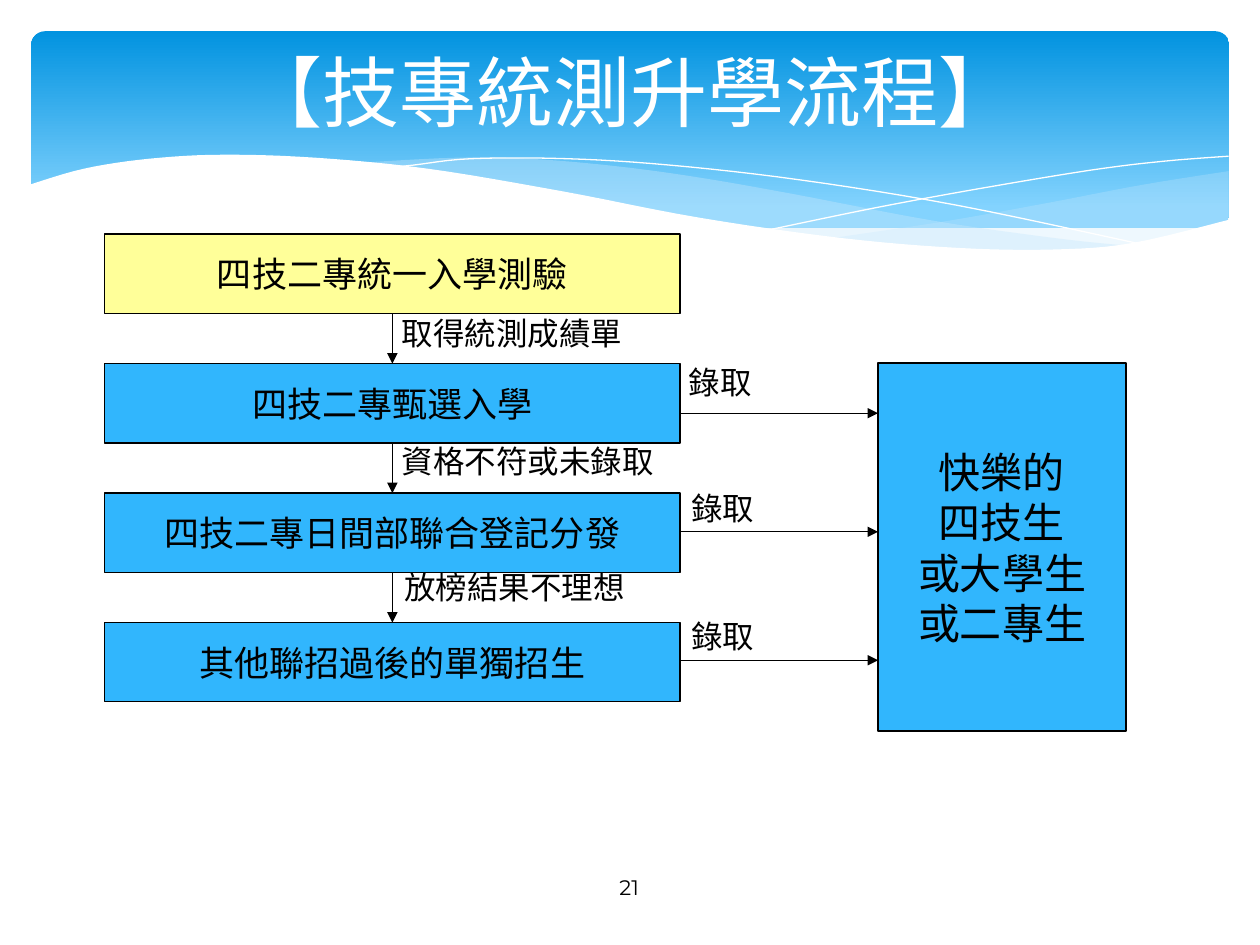
from dataclasses import dataclass

from lxml.etree import SubElement
from pptx import Presentation
from pptx.dml.color import RGBColor
from pptx.enum.shapes import MSO_CONNECTOR as Connector, MSO_SHAPE as Shape
from pptx.enum.text import MSO_ANCHOR as Anchor, PP_ALIGN as Align
from pptx.oxml.ns import qn
from pptx.util import Cm, Pt


@dataclass(frozen=True)
class Theme:
    white: str = "FFFFFF"
    black: str = "000000"
    banner_top: str = "0293E0"
    banner_bottom: str = "83D3FE"
    wave: str = "C6E7FC"
    exam: str = "FFFF99"
    step: str = "31B6FD"
    title_font: str = "Cabin"
    body_font: str = "Arial"
    number_font: str = "Montserrat"
    title_size: int = 44
    result_size: int = 24
    step_size: int = 20
    label_size: int = 18
    number_size: int = 12
    outline: float = 0.75


THEME = Theme()

BACK_WAVE = (
    [(24.77, 3.45), (23.01, 3.73), (21.13, 4.09), (19.13, 4.45), (16.79, 4.8)],
    [(16.79, 4.8), (17.91, 4.93), (19.23, 5.03), (20.68, 5.05), (22.15, 5),
     (23.57, 4.78), (24.77, 4.45)],
)
MIDDLE_WAVE = (
    [(22.68, 4.95), (21.26, 4.8), (18.82, 4.45), (15.98, 3.91), (14.1, 3.58),
     (12.42, 3.35), (10.67, 3.2), (9.17, 3.18), (7.26, 3.28)],
    [(7.26, 3.28), (9.19, 3.51), (11.4, 3.91), (14.38, 4.47), (16.51, 4.78),
     (18.34, 4.98), (19.94, 5.08), (21.29, 5.08), (22.68, 4.95)],
)
FALLING_LINE = [(7.85, 3.38), (8.33, 3.33), (9.5, 3.2), (11.43, 3.2), (13.51, 3.33),
                (16.15, 3.63), (19.3, 4.14), (23.04, 4.93)]
RISING_LINE = [(15.57, 4.62), (17.65, 4.19), (19.71, 3.81), (22, 3.43),
               (23.47, 3.25), (24.77, 3.15)]
FRONT_WAVE = (
    [(24.82, 4.42), (22.83, 4.9), (21.26, 5.03), (19.33, 5), (16.97, 4.8),
     (14.1, 4.39), (11.35, 3.86), (8.61, 3.4), (6.35, 3.18), (4.49, 3.12),
     (3.02, 3.2), (1.7, 3.4), (0.58, 3.73)],
    [(0.58, 6.12), (24.82, 6.12)],
)

STEPS = ["四技二專統一入學測驗", "四技二專甄選入學", "四技二專日間部聯合登記分發", "其他聯招過後的單獨招生"]
STEP_LEFT, STEP_TOP, STEP_WIDTH, STEP_HEIGHT, STEP_PITCH = 2.11, 4.72, 11.6, 1.6, 2.61
RESULT_LEFT = 17.7
RESULT = ["快樂的", "四技生", "或大學生", "或二專生"]
CONDITIONS = [
    ("取得統測成績單", 7.85, 6.2, 4.95, False),
    ("資格不符或未錄取", 7.85, 8.79, 6.45, True),
    ("放榜結果不理想", 7.9, 11.33, 5.59, True),
]
ADMISSIONS = [(8.33, 13.64, 7.19), (10.72, 13.69, 9.73), (13.31, 13.69, 12.32)]


def color(value):
    return RGBColor.from_string(value)


def smooth(knots, steps=6):
    if len(knots) < 3:
        return knots
    padded = [knots[0], *knots, knots[-1]]
    points = [knots[0]]
    for a, b, c, d in zip(padded, padded[1:], padded[2:], padded[3:]):
        for step in range(1, steps + 1):
            t = step / steps
            points.append(tuple(
                (2 * q + (r - p) * t + (2 * p - 5 * q + 4 * r - s) * t**2
                 + (3 * q - p - 3 * r + s) * t**3) / 2
                for p, q, r, s in zip(a, b, c, d)))
    return points


def add_curve(slide, edges, closed):
    points = [(Cm(x), Cm(y)) for edge in edges for x, y in smooth(edge)]
    builder = slide.shapes.build_freeform(*points[0])
    builder.add_line_segments(points[1:], close=closed)
    shape = builder.convert_to_shape()
    shape.shadow.inherit = False
    return shape


def add_wave(slide, edges, fill, opacity=100):
    shape = add_curve(slide, edges, True)
    shape.fill.solid()
    shape.fill.fore_color.rgb = color(fill)
    shape.line.fill.background()
    if opacity < 100:
        fill_color = shape._element.find(".//" + qn("a:srgbClr"))
        SubElement(fill_color, qn("a:alpha"), val=str(opacity * 1000))


def add_hairline(slide, knots):
    shape = add_curve(slide, [knots], False)
    shape.fill.background()
    shape.line.color.rgb = color(THEME.white)
    shape.line.width = Pt(0)


def add_banner(slide):
    banner = slide.shapes.add_shape(
        Shape.ROUNDED_RECTANGLE, Cm(0.63), Cm(0.63), Cm(24.15), Cm(3.96))
    banner.adjustments[0] = 0.07
    banner.shadow.inherit = False
    banner.line.fill.background()
    banner.fill.gradient()
    banner.fill.gradient_angle = 270
    first, last = banner.fill.gradient_stops
    first.color.rgb, first.position = color(THEME.banner_top), 0
    last.color.rgb, last.position = color(THEME.banner_bottom), 0.9
    add_wave(slide, BACK_WAVE, THEME.wave, 29)
    add_wave(slide, MIDDLE_WAVE, THEME.wave, 40)
    add_hairline(slide, FALLING_LINE)
    add_hairline(slide, RISING_LINE)
    add_wave(slide, FRONT_WAVE, THEME.white)


def write(shape, lines, size, font=THEME.body_font, ink=THEME.black,
          align=Align.CENTER, anchor=Anchor.MIDDLE, wrap=False):
    frame = shape.text_frame
    frame.word_wrap = wrap
    frame.vertical_anchor = anchor
    for index, line in enumerate(lines):
        paragraph = frame.add_paragraph() if index else frame.paragraphs[0]
        paragraph.alignment = align
        run = paragraph.add_run()
        run.text = line
        run.font.name = font
        run.font.size = Pt(size)
        run.font.color.rgb = color(ink)


def add_text(slide, box, text, size, **style):
    write(slide.shapes.add_textbox(*map(Cm, box)), [text], size, **style)


def add_label(slide, left, top, width, text, wrap=False):
    add_text(slide, (left, top, width, 1.02), text, THEME.label_size,
             align=Align.LEFT, anchor=Anchor.TOP, wrap=wrap)


def add_box(slide, box, lines, size, fill):
    shape = slide.shapes.add_shape(Shape.RECTANGLE, *map(Cm, box))
    shape.shadow.inherit = False
    shape.fill.solid()
    shape.fill.fore_color.rgb = color(fill)
    shape.line.color.rgb = color(THEME.black)
    shape.line.width = Pt(THEME.outline)
    write(shape, lines, size)


def add_arrow(slide, *ends):
    arrow = slide.shapes.add_connector(Connector.STRAIGHT, *map(Cm, ends))
    arrow.line.color.rgb = color(THEME.black)
    arrow.line.width = Pt(THEME.outline)
    SubElement(arrow.line._get_or_add_ln(), qn("a:tailEnd"), type="triangle")
    SubElement(arrow._element.spPr, qn("a:effectLst"))


def add_steps(slide):
    middle = STEP_LEFT + STEP_WIDTH / 2
    for index, text in enumerate(STEPS):
        top = STEP_TOP + index * STEP_PITCH
        add_box(slide, (STEP_LEFT, top, STEP_WIDTH, STEP_HEIGHT), [text],
                THEME.step_size, THEME.step if index else THEME.exam)
        if index:
            add_arrow(slide, middle, top - STEP_PITCH + STEP_HEIGHT, middle, top)
    for text, left, top, width, wrap in CONDITIONS:
        add_label(slide, left, top, width, text, wrap)


def add_result(slide):
    add_box(slide, (RESULT_LEFT, 7.32, 5, 7.42), RESULT, THEME.result_size, THEME.step)
    for arrow_y, left, top in ADMISSIONS:
        add_arrow(slide, STEP_LEFT + STEP_WIDTH, arrow_y, RESULT_LEFT, arrow_y)
        add_label(slide, left, top, 1.78, "錄取")


def main():
    presentation = Presentation()
    presentation.slide_width, presentation.slide_height = Cm(25.4), Cm(19.05)
    slide = presentation.slides.add_slide(presentation.slide_layouts[6])
    add_banner(slide)
    add_text(slide, (11.07, 17.37, 3.23, 1.02), "21", THEME.number_size,
             font=THEME.number_font, wrap=True)
    add_text(slide, (0.99, 0.23, 23.44, 3.18), "【技專統測升學流程】", THEME.title_size,
             font=THEME.title_font, ink=THEME.white, wrap=True)
    add_steps(slide)
    add_result(slide)
    presentation.save("out.pptx")


if __name__ == "__main__":
    main()
